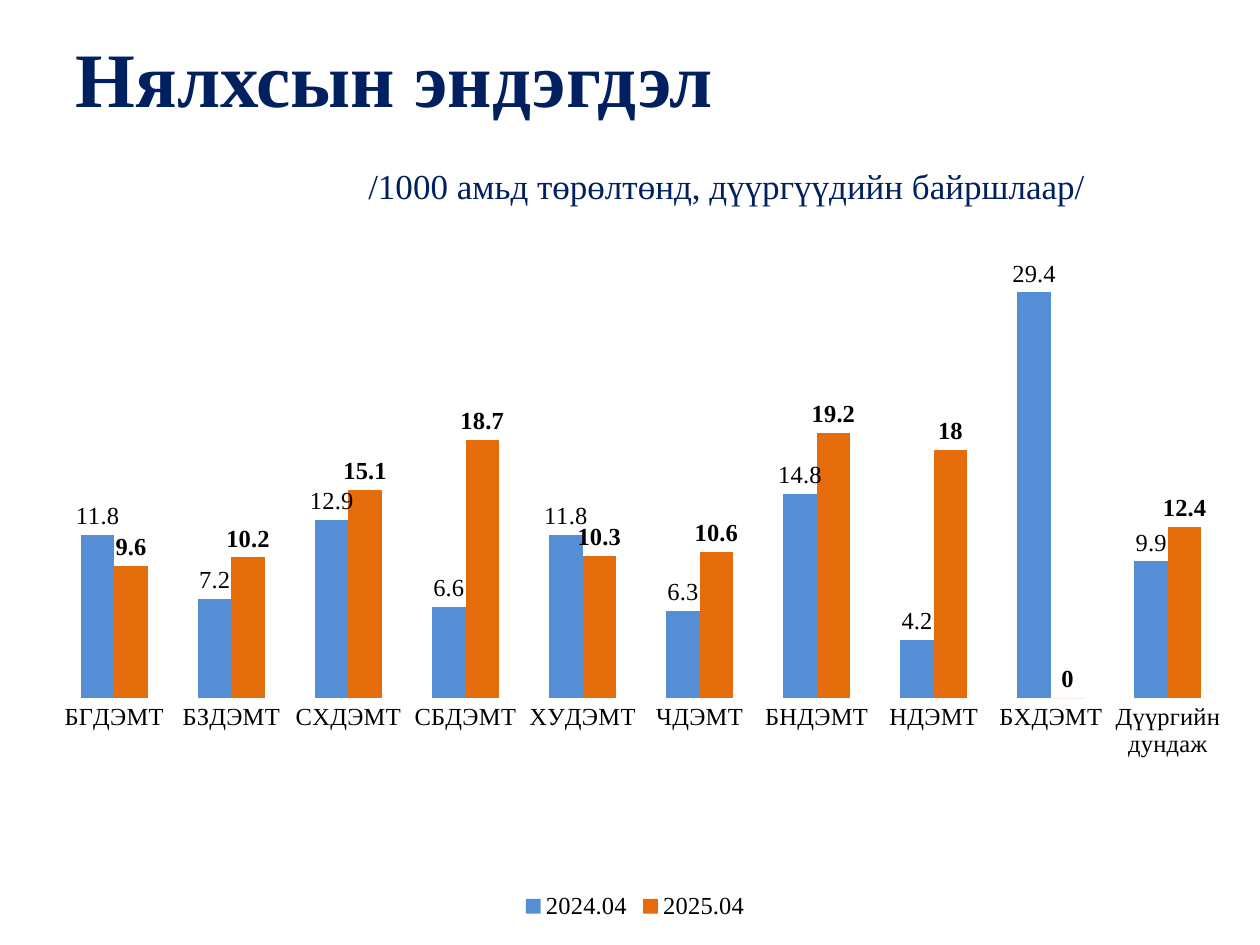
import pptx
import pptx.chart.data
import pptx.dml.color
import pptx.enum.chart
import pptx.enum.text
import pptx.oxml
import pptx.util
from pptx.util import Cm, Pt

# Content
HEADING = "Нялхсын эндэгдэл"
SUBHEADING = "/1000 амьд төрөлтөнд, дүүргүүдийн байршлаар/"
DISTRICTS = ["БГДЭМТ", "БЗДЭМТ", "СХДЭМТ", "СБДЭМТ", "ХУДЭМТ", "ЧДЭМТ",
             "БНДЭМТ", "НДЭМТ", "БХДЭМТ", "Дүүргийн дундаж"]
RATES = {
    "2024.04": [11.8, 7.2, 12.9, 6.6, 11.8, 6.3, 14.8, 4.2, 29.4, 9.9],
    "2025.04": [9.6, 10.2, 15.1, 18.7, 10.3, 10.6, 19.2, 18, 0, 12.4],
}

THEME = {
    "font": "Times New Roman",
    "navy": "002060", "black": "000000",
    "2024.04": "558ED5", "2025.04": "E46C0A",
    "heading": 44, "subheading": 20, "chart": 14,
}
BOLD_YEAR = "2025.04"
PLOT_AREA = {"x": 0.02, "y": 0.03, "w": 0.97, "h": 0.66}


def rgb(key):
    return pptx.dml.color.RGBColor.from_string(THEME[key])


def style_font(font, size="chart", color="black", bold=False):
    font.name = THEME["font"]
    font.size = Pt(THEME[size])
    font.bold = bold
    font.color.rgb = rgb(color)


def write_text(paragraph, text, indent=0, space_before=0, **font_format):
    run = paragraph.add_run()
    run.text = text
    style_font(run.font, **font_format)
    paragraph.alignment = pptx.enum.text.PP_ALIGN.LEFT
    paragraph.space_before = Pt(space_before)
    properties = paragraph._p.get_or_add_pPr()
    properties.set("marL", str(Cm(indent)))
    properties.set("indent", "0")


def add_title(slide):
    title = slide.shapes.title
    title.left, title.top, title.width, title.height = (
        Cm(1.27), Cm(0.8), Cm(22.86), Cm(3.18))
    frame = title.text_frame
    frame.auto_size = pptx.enum.text.MSO_AUTO_SIZE.NONE
    frame.vertical_anchor = pptx.enum.text.MSO_ANCHOR.MIDDLE
    write_text(frame.paragraphs[0], HEADING,
               size="heading", color="navy", bold=True)
    write_text(frame.add_paragraph(), SUBHEADING, indent=5.9, space_before=24,
               size="subheading", color="navy")


def fix_plot_area(chart):
    parts = "".join(f'<c:{key}Mode val="edge"/>' for key in "xy")
    parts += "".join(f'<c:{key} val="{value}"/>'
                     for key, value in PLOT_AREA.items())
    layout = pptx.oxml.parse_xml(
        '<c:layout xmlns:c="http://schemas.openxmlformats.org/drawingml/2006/chart">'
        f'<c:manualLayout><c:layoutTarget val="inner"/>{parts}'
        '</c:manualLayout></c:layout>')
    plot_area = chart._chartSpace.chart.plotArea
    for old in plot_area.findall(layout.tag):
        plot_area.remove(old)
    plot_area.insert(0, layout)


def add_rates_chart(slide):
    rates = pptx.chart.data.CategoryChartData()
    rates.categories = DISTRICTS
    for year, values in RATES.items():
        rates.add_series(year, values)
    chart = slide.shapes.add_chart(
        pptx.enum.chart.XL_CHART_TYPE.COLUMN_CLUSTERED,
        Cm(0.64), Cm(3.89), Cm(24.33), Cm(14.76), rates).chart
    chart.has_title = False
    style_font(chart.font)
    fix_plot_area(chart)

    # Axes
    districts, scale = chart.category_axis, chart.value_axis
    districts.major_tick_mark = pptx.enum.chart.XL_TICK_MARK.NONE
    districts.format.line.fill.background()
    style_font(districts.tick_labels.font)
    scale.minimum_scale, scale.maximum_scale = 0, 35
    scale.has_major_gridlines = False
    scale.visible = False

    # Legend
    chart.has_legend = True
    chart.legend.position = pptx.enum.chart.XL_LEGEND_POSITION.BOTTOM
    chart.legend.include_in_layout = False
    style_font(chart.legend.font)

    # Columns and their values
    columns = chart.plots[0]
    columns.gap_width = 150
    columns.overlap = 0
    columns.vary_by_categories = False
    for year in columns.series:
        year.format.fill.solid()
        year.format.fill.fore_color.rgb = rgb(year.name)
        labels = year.data_labels
        labels.show_value = True
        labels.position = pptx.enum.chart.XL_LABEL_POSITION.OUTSIDE_END
        style_font(labels.font, bold=year.name == BOLD_YEAR)


def main():
    deck = pptx.Presentation()
    deck.slide_width, deck.slide_height = Cm(25.4), Cm(19.05)
    slide = deck.slides.add_slide(deck.slide_layouts.get_by_name("Title Only"))
    add_title(slide)
    add_rates_chart(slide)
    deck.save("out.pptx")


if __name__ == "__main__":
    main()
